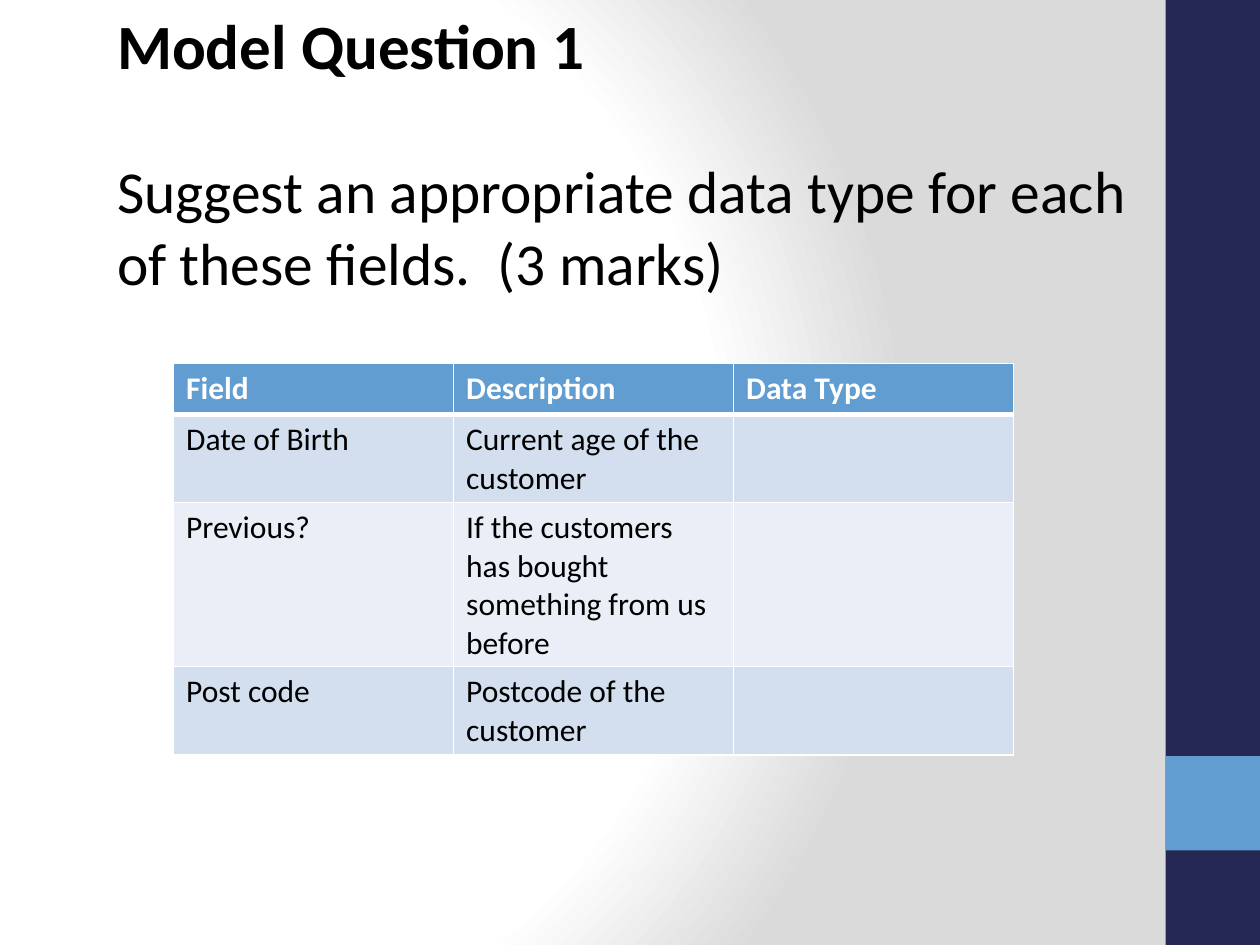
from lxml import etree
from pptx import Presentation
from pptx.dml.color import RGBColor
from pptx.enum.shapes import MSO_SHAPE
from pptx.enum.text import MSO_AUTO_SIZE
from pptx.oxml import parse_xml
from pptx.oxml.ns import nsdecls, qn
from pptx.util import Pt

FONT = "Calibri"
BLACK = RGBColor(0x00, 0x00, 0x00)
WHITE = RGBColor(0xFF, 0xFF, 0xFF)
GREY = RGBColor(0xDA, 0xDA, 0xDA)
NAVY = RGBColor(0x24, 0x28, 0x52)
BLUE = RGBColor(0x62, 0x9D, 0xD1)
BANDS = (RGBColor(0xD3, 0xDF, 0xEE), RGBColor(0xEA, 0xEF, 0xF7))

# text, size, bold, space before
QUESTION = [
    ("Model Question 1", 36, True, 0),
    ("Suggest an appropriate data type for each of these fields.  (3 marks)", 34, False, 41.5),
]
FIELDS = [
    ("Field", "Description", "Data Type"),
    ("Date of Birth", "Current age of the customer", ""),
    ("Previous?", "If the customers has bought something from us before", ""),
    ("Post code", "Postcode of the customer", ""),
]
# left, top, width, height, colour
SIDE_BARS = [(666, 0, 54, 540, NAVY), (666, 432, 54, 54, BLUE)]
BACKGROUND_STOPS = [(0, WHITE), (75, WHITE), (100, GREY)]

TABLE_LEFT, TABLE_TOP = 99.2, 207.6
COLUMN_WIDTH, ROW_HEIGHT = 160, 29.2


def set_radial_background(slide):
    stops = "".join(
        f'<a:gs pos="{position * 1000}"><a:srgbClr val="{color}"/></a:gs>'
        for position, color in BACKGROUND_STOPS
    )
    fill = slide.background.fill
    fill.solid()
    properties = slide.element.find(f".//{qn('p:bgPr')}")
    properties.replace(properties[0], parse_xml(
        f'<a:gradFill {nsdecls("a")} rotWithShape="1"><a:gsLst>{stops}</a:gsLst>'
        '<a:path path="circle">'
        '<a:fillToRect l="20000" t="50000" r="100000" b="50000"/>'
        '</a:path></a:gradFill>'
    ))


def style_font(font, size, color, bold):
    font.name = FONT
    font.size = Pt(size)
    font.color.rgb = color
    font.bold = bold


def set_borders(cell, widths):
    """Draw white borders; the fill must already be set, as lines precede it."""
    properties = cell._tc.get_or_add_tcPr()
    for index, (side, width) in enumerate(widths.items()):
        line = etree.Element(qn(f"a:ln{side}"), w=str(Pt(width)))
        solid = etree.SubElement(line, qn("a:solidFill"))
        etree.SubElement(solid, qn("a:srgbClr"), val=str(WHITE))
        properties.insert(index, line)


def add_side_bars(slide):
    for left, top, width, height, color in SIDE_BARS:
        bar = slide.shapes.add_shape(
            MSO_SHAPE.RECTANGLE, Pt(left), Pt(top), Pt(width), Pt(height))
        bar.shadow.inherit = False
        bar.fill.solid()
        bar.fill.fore_color.rgb = color
        bar.line.fill.background()


def add_question(slide):
    frame = slide.shapes.add_textbox(Pt(59.8), Pt(0), Pt(595.4), Pt(298)).text_frame
    frame.word_wrap = True
    frame.auto_size = MSO_AUTO_SIZE.SHAPE_TO_FIT_TEXT
    for index, (text, size, bold, gap) in enumerate(QUESTION):
        paragraph = frame.add_paragraph() if index else frame.paragraphs[0]
        paragraph.text = text
        paragraph.space_before = Pt(gap)
        style_font(paragraph.runs[0].font, size, BLACK, bold)


def add_field_table(slide):
    row_count, column_count = len(FIELDS), len(FIELDS[0])
    table = slide.shapes.add_table(
        row_count, column_count, Pt(TABLE_LEFT), Pt(TABLE_TOP),
        Pt(COLUMN_WIDTH * column_count), Pt(ROW_HEIGHT * row_count)).table
    for row, texts in enumerate(FIELDS):
        is_header = row == 0
        for column, text in enumerate(texts):
            cell = table.cell(row, column)
            cell.text = text
            style_font(cell.text_frame.paragraphs[0].font, 18,
                       WHITE if is_header else BLACK, is_header)
            cell.fill.solid()
            cell.fill.fore_color.rgb = BLUE if is_header else BANDS[(row - 1) % 2]
            set_borders(cell, {"L": 1, "R": 1, "T": 3 if row == 1 else 1,
                               "B": 3 if is_header else 1})


def main():
    presentation = Presentation()
    presentation.slide_width, presentation.slide_height = Pt(720), Pt(540)
    slide = presentation.slides.add_slide(presentation.slide_layouts[6])
    set_radial_background(slide)
    add_side_bars(slide)
    add_question(slide)
    add_field_table(slide)
    presentation.save("out.pptx")


if __name__ == "__main__":
    main()
